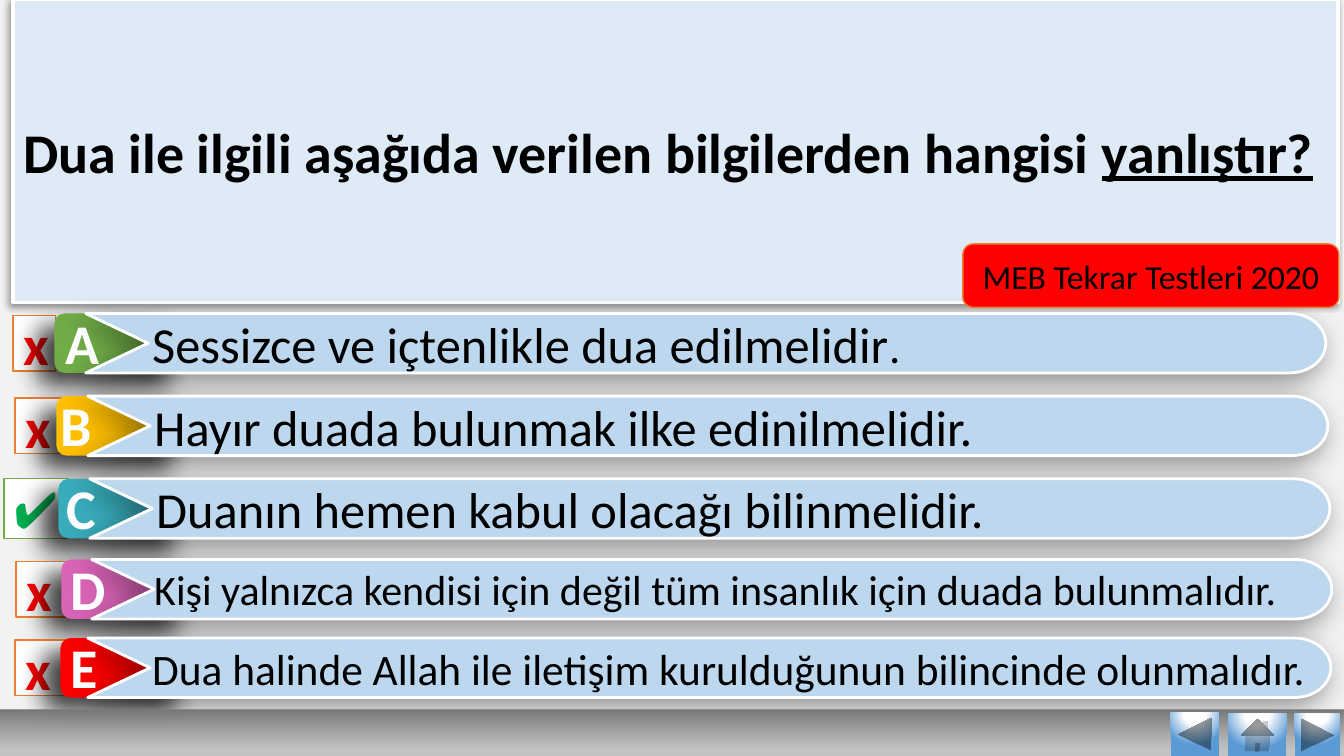
from math import cos, pi, sin

from lxml.etree import SubElement
from pptx import Presentation
from pptx.dml.color import RGBColor
from pptx.enum.shapes import MSO_SHAPE
from pptx.enum.text import MSO_ANCHOR, MSO_AUTO_SIZE, PP_ALIGN
from pptx.oxml import parse_xml
from pptx.oxml.ns import nsdecls, qn
from pptx.util import Inches, Pt

COLORS = {
    "page": "F2F2F2", "panel": "DEEBF7", "band": "BDD7EE", "white": "FFFFFF",
    "letter": "FEFEFE", "black": "000000", "red": "FF0000", "right": "00B050",
    "orange": "ED7D31", "green": "70AD47", "gold": "FFC000", "teal": "38ACBB",
    "pink": "DA64B7", "blue": "5B9BD5",
    "silver": "C0C0C0", "gray": "B3B3B3", "dark": "777777",
}
HEIGHT = 0.59

# letter, colour, top, mark left, mark width, pill left, band left, band right,
# letter left, text left, text size, runs
ROWS = [
    ("A", "green", 3.11, 0.13, 0.42, 0.54, 0.85, 13.15, 0.42, 1.51, 36,
     [("Sessizce ve içtenlikle dua edilmelidir", {}), (".", {"size": 32})]),
    ("B", "gold", 3.93, 0.15, 0.55, 0.56, 0.87, 13.17, 0.36, 1.53, 36,
     [("Hayır duada bulunmak ilke edinilmelidir.", {})]),
    ("C", "teal", 4.75, 0.04, 0.64, 0.58, 0.89, 13.19, 0.41, 1.55, 36,
     [("Duanın hemen kabul olacağı bilinmelidir.", {})]),
    ("D", "pink", 5.55, 0.16, 0.55, 0.61, 0.91, 13.21, 0.48, 1.53, 30,
     [("Kişi yalnızca kendisi için değil tüm insanlık için duada bulunmalıdır.", {})]),
    ("E", "red", 6.33, 0.15, 0.55, 0.60, 0.87, 13.20, 0.44, 1.51, 31,
     [("Dua halinde Allah ile iletişim kurulduğunun bilincinde olunmalıdır.", {})]),
]
ANSWER = "C"


def rgb(name):
    return RGBColor.from_string(COLORS[name])


def write(shape, runs, size=36, color="black", bold=False, align=PP_ALIGN.LEFT,
          anchor=MSO_ANCHOR.MIDDLE):
    """Fill a shape with one paragraph of (text, changes) runs."""
    frame = shape.text_frame
    frame.word_wrap = True
    frame.auto_size = MSO_AUTO_SIZE.NONE
    frame.vertical_anchor = anchor
    para = frame.paragraphs[0]
    para.alignment = align
    for words, change in runs:
        run = para.add_run()
        run.text = words
        font = run.font
        font.name = "Calibri"
        font.size = Pt(change.get("size", size))
        font.bold = bold
        font.underline = change.get("line")
        font.color.rgb = rgb(color)
    return frame


def paint(shape, fill, line=None, width=1):
    shape.shadow.inherit = False
    shape.fill.solid()
    shape.fill.fore_color.rgb = rgb(fill)
    if line:
        shape.line.color.rgb = rgb(line)
        shape.line.width = Pt(width)
    else:
        shape.line.fill.background()
    return shape


def shade(shape, alpha, blur, dist, angle):
    """Cast an outer shadow; alpha in percent, lengths in points."""
    effects = shape._element.spPr.find(qn("a:effectLst"))
    outer = SubElement(effects, qn("a:outerShdw"), blurRad=str(Pt(blur)),
                       dist=str(Pt(dist)), dir=str(angle * 60000),
                       algn="ctr", rotWithShape="0")
    tint = SubElement(outer, qn("a:srgbClr"), val=COLORS["black"])
    SubElement(tint, qn("a:alpha"), val=str(alpha * 1000))


def blend(shape, stops, course):
    """Replace the fill by a gradient of (percent, colour, alpha) stops."""
    shape.fill.background()
    marks = "".join(
        f'<a:gs pos="{pos * 1000}"><a:srgbClr val="{COLORS[name]}">'
        f'<a:alpha val="{alpha * 1000}"/></a:srgbClr></a:gs>'
        for pos, name, alpha in stops)
    grad = parse_xml(f'<a:gradFill {nsdecls("a")} rotWithShape="1">'
                     f'<a:gsLst>{marks}</a:gsLst>{course}</a:gradFill>')
    props = shape._element.spPr
    props.replace(props.find(qn("a:noFill")), grad)


def block(slide, kind, left, top, width, height, fill, line=None):
    shape = slide.shapes.add_shape(kind, Inches(left), Inches(top),
                                   Inches(width), Inches(height))
    return paint(shape, fill, line)


def band(slide, left, right, top):
    """Draw a bar with a notched left end and a round right end."""
    half, bend, notch = HEIGHT / 2, 0.36, 0.62
    turns = [-pi / 2 + pi * i / 24 for i in range(25)]
    points = [(right - bend + bend * cos(t), top + half + half * sin(t)) for t in turns]
    points += [(left, top + HEIGHT), (left + notch, top + half)]
    pen = slide.shapes.build_freeform(Inches(left), Inches(top))
    pen.add_line_segments([(Inches(x), Inches(y)) for x, y in points], close=True)
    shape = paint(pen.convert_to_shape(), "band", "white", 2)
    shade(shape, 40, 20, 7, 135)
    return shape


def letter(slide, text, left, top):
    box = slide.shapes.add_textbox(Inches(left), Inches(top), Inches(0.79), Inches(0.77))
    frame = write(box, [(text, {})], size=40, color="letter", bold=True,
                  align=PP_ALIGN.CENTER, anchor=MSO_ANCHOR.TOP)
    props = frame.paragraphs[0].runs[0]._r.get_or_add_rPr()
    props.set("spc", "50")
    props.insert(0, parse_xml(
        f'<a:ln {nsdecls("a")} w="{Pt(0.75)}"><a:solidFill>'
        f'<a:srgbClr val="{COLORS["white"]}"/></a:solidFill></a:ln>'))


def choice(slide, name, color, top, mark_x, mark_w, pill_x, left, right,
           name_x, text_x, size, runs):
    # Right or wrong mark
    if name == ANSWER:
        mark = block(slide, MSO_SHAPE.RECTANGLE, mark_x, top, mark_w, HEIGHT,
                     "white", "green")
        write(mark, [("✔", {})], size=36, color="right")
    else:
        mark = block(slide, MSO_SHAPE.RECTANGLE, mark_x, top + 0.02, mark_w, 0.55,
                     "white", "orange")
        write(mark, [("x", {})], size=40, color="red", bold=True)
    # Coloured pill, answer bar and letter
    pill = block(slide, MSO_SHAPE.ROUNDED_RECTANGLE, pill_x, top, 1.31, HEIGHT, color)
    shade(pill, 75, 18, 15, 143)
    frame = write(band(slide, left, right, top), runs, size=size)
    frame.margin_left = Inches(text_x - left)
    frame.margin_right = 0
    letter(slide, name, name_x, top - 0.1)


def footer(slide):
    bar = block(slide, MSO_SHAPE.RECTANGLE, 0, 7.04, 13.33, 0.49, "gray")
    blend(bar, [(0, "silver", 100), (17, "gray", 70), (100, "dark", 100)],
          '<a:lin ang="16200000" scaled="0"/>')
    keys = [(MSO_SHAPE.ACTION_BUTTON_BACK_OR_PREVIOUS, 11.61, 7.07, 0.48),
            (MSO_SHAPE.ACTION_BUTTON_FORWARD_OR_NEXT, 12.84, 7.08, 0.45),
            (MSO_SHAPE.ACTION_BUTTON_HOME, 12.18, 7.08, 0.58)]
    for kind, left, top, width in keys:
        key = block(slide, kind, left, top, width, 0.43, "blue")
        blend(key, [(0, "white", 100), (35, "white", 100), (100, "blue", 100)],
              '<a:path path="circle"><a:fillToRect l="50000" t="-80000" '
              'r="50000" b="180000"/></a:path>')


def main():
    deck = Presentation()
    deck.slide_width, deck.slide_height = Inches(13.33), Inches(7.5)
    slide = deck.slides.add_slide(deck.slide_layouts[5])
    slide.background.fill.solid()
    slide.background.fill.fore_color.rgb = rgb("page")

    # Question
    title = slide.shapes.title
    title.left, title.top = Inches(0.13), Inches(-0.01)
    title.width, title.height = Inches(13.14), Inches(3.01)
    paint(title, "panel", "white", 2.5)
    shade(title, 40, 4, 3, 135)
    write(title, [("Dua ile ilgili aşağıda verilen bilgilerden hangisi ", {}),
                  ("yanlıştır?", {"line": True})],
          size=40, bold=True, align=PP_ALIGN.JUSTIFY)

    # Answers
    for row in ROWS:
        choice(slide, *row)

    # Footer and source tag
    footer(slide)
    tag = block(slide, MSO_SHAPE.ROUNDED_RECTANGLE, 9.55, 2.42, 3.73, 0.63,
                "red", "orange")
    write(tag, [("MEB Tekrar Testleri 2020", {})], size=24, align=PP_ALIGN.CENTER)

    deck.save("out.pptx")


if __name__ == "__main__":
    main()
